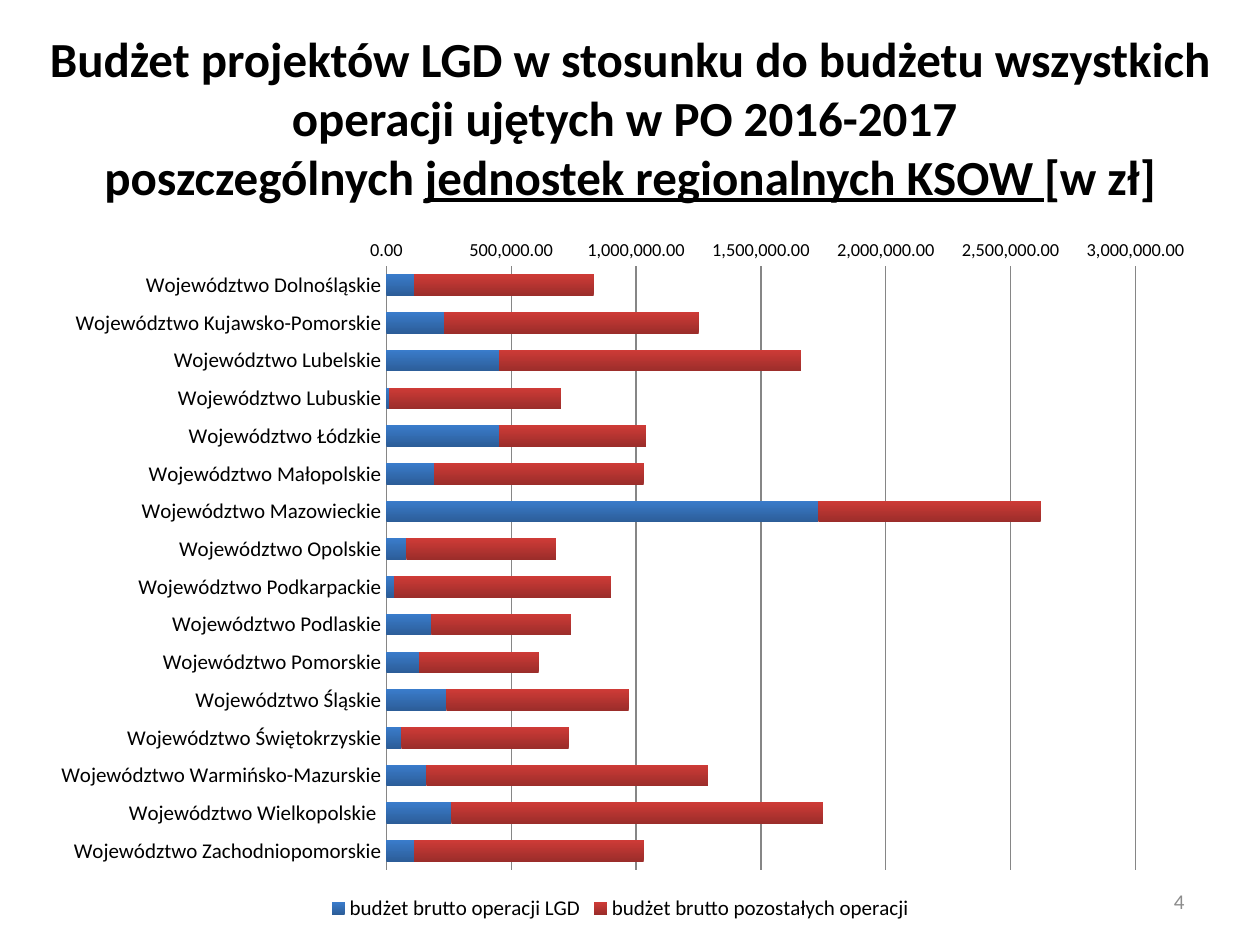
from lxml import etree
from pptx import Presentation
from pptx.chart.data import CategoryChartData
from pptx.dml.color import RGBColor
from pptx.enum.chart import XL_CHART_TYPE, XL_LEGEND_POSITION, XL_TICK_MARK
from pptx.enum.text import MSO_ANCHOR, PP_ALIGN
from pptx.oxml.ns import qn
from pptx.util import Inches, Pt

BAR_STACKED = XL_CHART_TYPE.BAR_STACKED
BOTTOM = XL_LEGEND_POSITION.BOTTOM
NO_TICK = XL_TICK_MARK.NONE
MIDDLE = MSO_ANCHOR.MIDDLE
CENTER, RIGHT = PP_ALIGN.CENTER, PP_ALIGN.RIGHT

FONT = "Calibri"
COLORS = {"text": "000000", "number": "8C8C8C", "grid": "868686"}

# Each title line is a list of (text, underlined)
TITLE = [
    [("Budżet projektów LGD w stosunku do budżetu wszystkich operacji ujętych w PO 2016-2017 ", False)],
    [("poszczególnych ", False), ("jednostek regionalnych KSOW ", True), ("[w zł]", False)],
]
PAGE_NUMBER = "4"

SERIES = ["budżet brutto operacji LGD", "budżet brutto pozostałych operacji"]
SERIES_GRADIENTS = [("2C5D98", "3A7CCB"), ("9B2D2A", "CE3B37")]  # bottom, top
BUDGETS = [
    ("Dolnośląskie", 110000, 720000),
    ("Kujawsko-Pomorskie", 230000, 1020000),
    ("Lubelskie", 450000, 1210000),
    ("Lubuskie", 10000, 690000),
    ("Łódzkie", 450000, 590000),
    ("Małopolskie", 190000, 840000),
    ("Mazowieckie", 1730000, 890000),
    ("Opolskie", 80000, 600000),
    ("Podkarpackie", 30000, 870000),
    ("Podlaskie", 180000, 560000),
    ("Pomorskie", 130000, 480000),
    ("Śląskie", 240000, 730000),
    ("Świętokrzyskie", 60000, 670000),
    ("Warmińsko-Mazurskie", 160000, 1130000),
    ("Wielkopolskie ", 260000, 1490000),
    ("Zachodniopomorskie", 110000, 920000),
]
PLOT_AREA = {"x": 0.3, "y": 0.06, "w": 0.64, "h": 0.86}  # shares of the chart


def rgb(name):
    return RGBColor.from_string(COLORS[name])


def style_font(font, size, color="text", bold=False):
    font.name, font.size, font.bold = FONT, Pt(size), bold
    font.color.rgb = rgb(color)


def add_text_box(slide, left, top, width, height, align):
    tf = slide.shapes.add_textbox(*map(Inches, (left, top, width, height))).text_frame
    tf.word_wrap = True
    tf.vertical_anchor = MIDDLE
    p = tf.paragraphs[0]
    p.alignment = align
    return p


def add_title(slide):
    p = add_text_box(slide, 0, 0.3, 10, 1.25, CENTER)
    for i, line in enumerate(TITLE):
        if i:
            p.add_line_break()
        for text, underlined in line:
            r = p.add_run()
            r.text = text
            style_font(r.font, 28, bold=True)
            r.font.underline = underlined


def place_plot_area(chart):
    """Fix the inner plot area, which python-pptx leaves automatic."""
    plot_area = chart.plots[0]._element.getparent()
    for old in plot_area.findall(qn("c:layout")):
        plot_area.remove(old)
    layout = etree.Element(qn("c:layout"))
    plot_area.insert(0, layout)
    manual = etree.SubElement(layout, qn("c:manualLayout"))
    settings = {"layoutTarget": "inner", "xMode": "edge", "yMode": "edge", **PLOT_AREA}
    for tag, value in settings.items():
        etree.SubElement(manual, qn(f"c:{tag}")).set("val", str(value))


def add_budget_chart(slide):
    names, *columns = zip(*BUDGETS)
    data = CategoryChartData(number_format="#,##0.00")
    data.categories = [f"Województwo {name}" for name in names]
    for name, values in zip(SERIES, columns):
        data.add_series(name, values)
    box = map(Inches, (0.28, 1.78, 9.29, 5.57))
    chart = slide.shapes.add_chart(BAR_STACKED, *box, data).chart
    chart.has_title = False
    style_font(chart.font, 10)
    place_plot_area(chart)

    plot = chart.plots[0]
    plot.gap_width, plot.overlap = 75, 100
    plot.vary_by_categories = False
    for series, gradient in zip(plot.series, SERIES_GRADIENTS):
        fill = series.format.fill
        fill.gradient()
        fill.gradient_angle = 90
        for stop, position, color in zip(fill.gradient_stops, (0, 1), gradient):
            stop.position = position
            stop.color.rgb = RGBColor.from_string(color)

    regions, amounts = chart.category_axis, chart.value_axis
    for axis, size in ((regions, 12), (amounts, 10.5)):
        axis.major_tick_mark = axis.minor_tick_mark = NO_TICK
        style_font(axis.tick_labels.font, size)
    regions.reverse_order = True
    regions.format.line.color.rgb = rgb("grid")
    amounts.minimum_scale, amounts.maximum_scale = 0, 3000000
    amounts.major_unit = 500000
    amounts.format.line.fill.background()
    amounts.has_major_gridlines = True
    amounts.major_gridlines.format.line.color.rgb = rgb("grid")
    amounts.tick_labels.number_format = "#,##0.00"
    amounts.tick_labels.number_format_is_linked = False

    chart.has_legend = True
    chart.legend.position = BOTTOM
    chart.legend.include_in_layout = False
    style_font(chart.legend.font, 12)


def main():
    prs = Presentation()
    prs.slide_width, prs.slide_height = Inches(10), Inches(7.5)
    slide = prs.slides.add_slide(prs.slide_layouts[6])
    add_title(slide)
    p = add_text_box(slide, 7.17, 6.95, 2.33, 0.4, RIGHT)
    p.text = PAGE_NUMBER
    style_font(p.runs[0].font, 12, "number")
    add_budget_chart(slide)
    prs.save("out.pptx")


if __name__ == "__main__":
    main()
